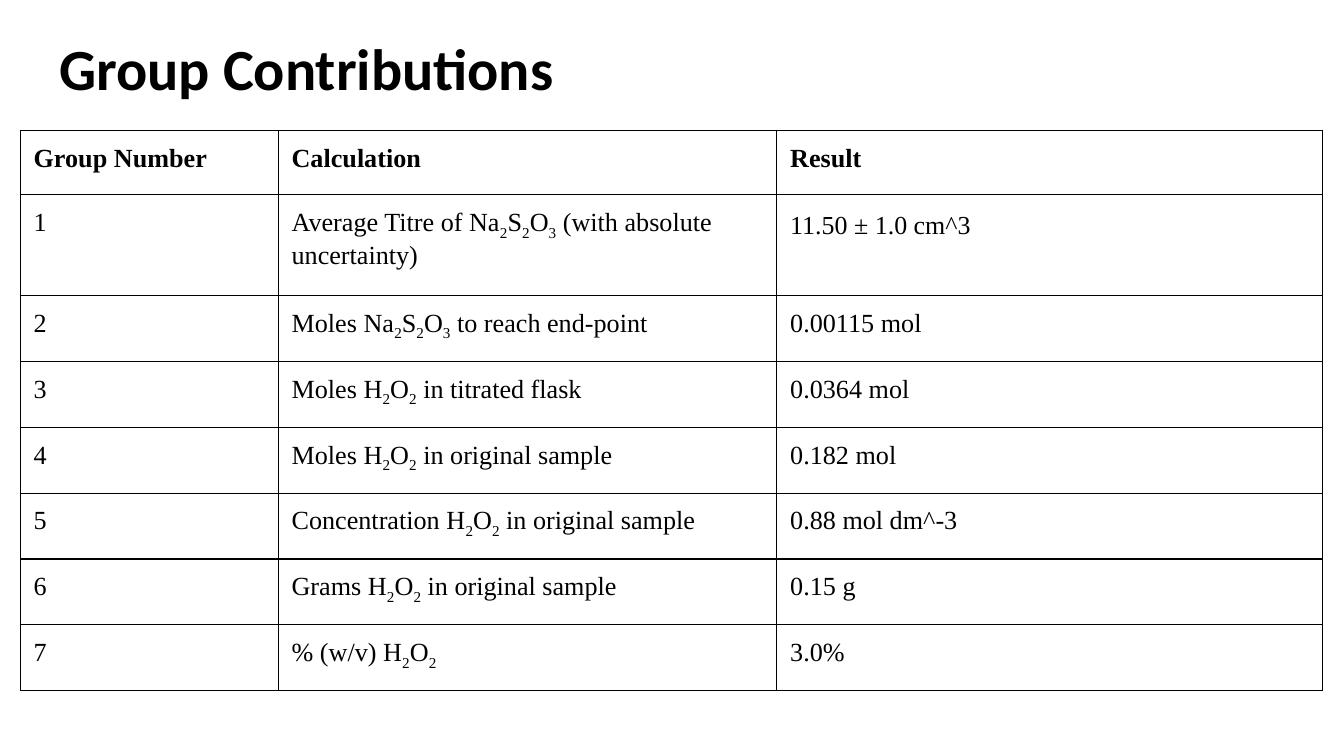
from lxml.etree import SubElement
from pptx import Presentation
from pptx.dml.color import RGBColor
from pptx.enum.text import MSO_ANCHOR, MSO_AUTO_SIZE, PP_ALIGN
from pptx.oxml.ns import qn
from pptx.util import Inches, Pt

COLORS = {"text": "000000", "border": "000000", "paper": "FFFFFF"}
HEADERS = ["Group Number", "Calculation", "Result"]
CALCULATIONS = [
    ("Average Titre of Na_2S_2O_3 (with absolute uncertainty)", "11.50 ± 1.0 cm^3"),
    ("Moles Na_2S_2O_3 to reach end-point", "0.00115 mol"),
    ("Moles H_2O_2 in titrated flask", "0.0364 mol"),
    ("Moles H_2O_2 in original sample", "0.182 mol"),
    ("Concentration H_2O_2 in original sample", "0.88 mol dm^-3"),
    ("Grams H_2O_2 in original sample", "0.15 g"),
    ("% (w/v) H_2O_2", "3.0%"),
]
COL_WIDTHS = [1.92, 3.71, 4.06]
ROW_HEIGHTS = [0.48, 0.75] + [0.49] * 6


def add_run(p, text, size, font, bold=False, baseline=0):
    """Append one formatted run, raised or lowered by a baseline percentage."""
    r = p.add_run()
    r.text = text
    r.font.size = Pt(size)
    r.font.name = font
    r.font.bold = bold
    r.font.color.rgb = RGBColor.from_string(COLORS["text"])
    if baseline:
        r._r.get_or_add_rPr().set("baseline", str(baseline * 1000))


def add_formula(p, text, **style):
    """Write text in which each underscore makes the next character a subscript."""
    first, *rest = text.split("_")
    add_run(p, first, **style)
    for part in rest:
        add_run(p, part[0], baseline=-25, **style)
        if part[1:]:
            add_run(p, part[1:], **style)


def set_margins(box):
    """Give a cell or text frame equal margins on all sides."""
    for side in ("left", "right", "top", "bottom"):
        setattr(box, f"margin_{side}", Inches(0.1))


def set_borders(cell):
    """Draw a thin line on every side of a cell."""
    tcPr = cell._tc.get_or_add_tcPr()
    for i, side in enumerate(("lnL", "lnR", "lnT", "lnB")):
        ln = tcPr.makeelement(qn(f"a:{side}"), {"w": str(Pt(0.75))})
        fill = SubElement(ln, qn("a:solidFill"))
        SubElement(fill, qn("a:srgbClr"), val=COLORS["border"])
        tcPr.insert(i, ln)


def add_title(slide, left, top, width, height):
    """Fill and place the title placeholder."""
    sp = slide.shapes.title
    sp.left, sp.top = Inches(left), Inches(top)
    sp.width, sp.height = Inches(width), Inches(height)
    tf = sp.text_frame
    tf.auto_size = MSO_AUTO_SIZE.NONE
    tf.word_wrap = True
    tf.vertical_anchor = MSO_ANCHOR.TOP
    set_margins(tf)
    p = tf.paragraphs[0]
    p.alignment = PP_ALIGN.LEFT
    add_run(p, "Group Contributions", 31.2, "Calibri", bold=True)


def add_results_table(slide, left, top):
    """Add the table of each group's calculation and result."""
    rows = [HEADERS] + [(str(n), *c) for n, c in enumerate(CALCULATIONS, 1)]
    table = slide.shapes.add_table(
        len(rows), len(HEADERS), Inches(left), Inches(top),
        Inches(sum(COL_WIDTHS)), Inches(sum(ROW_HEIGHTS))).table
    table.horz_banding = False
    for col, width in zip(table.columns, COL_WIDTHS):
        col.width = Inches(width)
    for i, (row, height) in enumerate(zip(table.rows, ROW_HEIGHTS)):
        row.height = Inches(height)
        for j, cell in enumerate(row.cells):
            cell.fill.solid()
            cell.fill.fore_color.rgb = RGBColor.from_string(COLORS["paper"])
            set_margins(cell)
            set_borders(cell)
            p = cell.text_frame.paragraphs[0]
            if (i, j) == (1, 2):
                add_run(p, rows[i][j], 24, "Times New Roman", baseline=30)
            else:
                add_formula(p, rows[i][j], size=14, font="Times New Roman", bold=i == 0)


def main():
    """Build the slide and save it."""
    prs = Presentation()
    prs.slide_width = Inches(10)
    prs.slide_height = prs.slide_width * 9 // 16
    slide = prs.slides.add_slide(prs.slide_layouts[5])
    add_title(slide, 0.34, 0.14, 9.32, 0.63)
    add_results_table(slide, 0.15, 0.97)
    prs.save("out.pptx")


if __name__ == "__main__":
    main()
